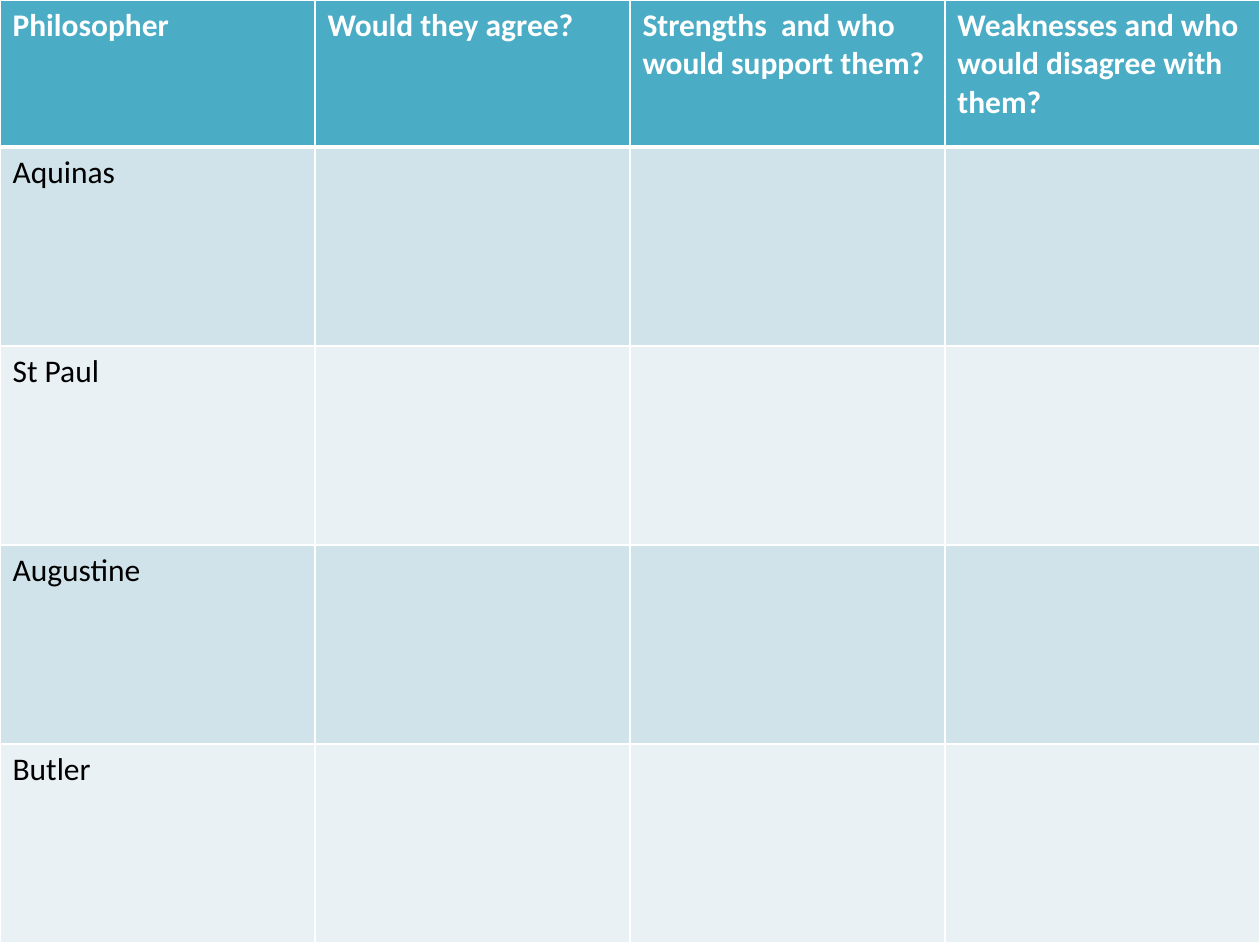
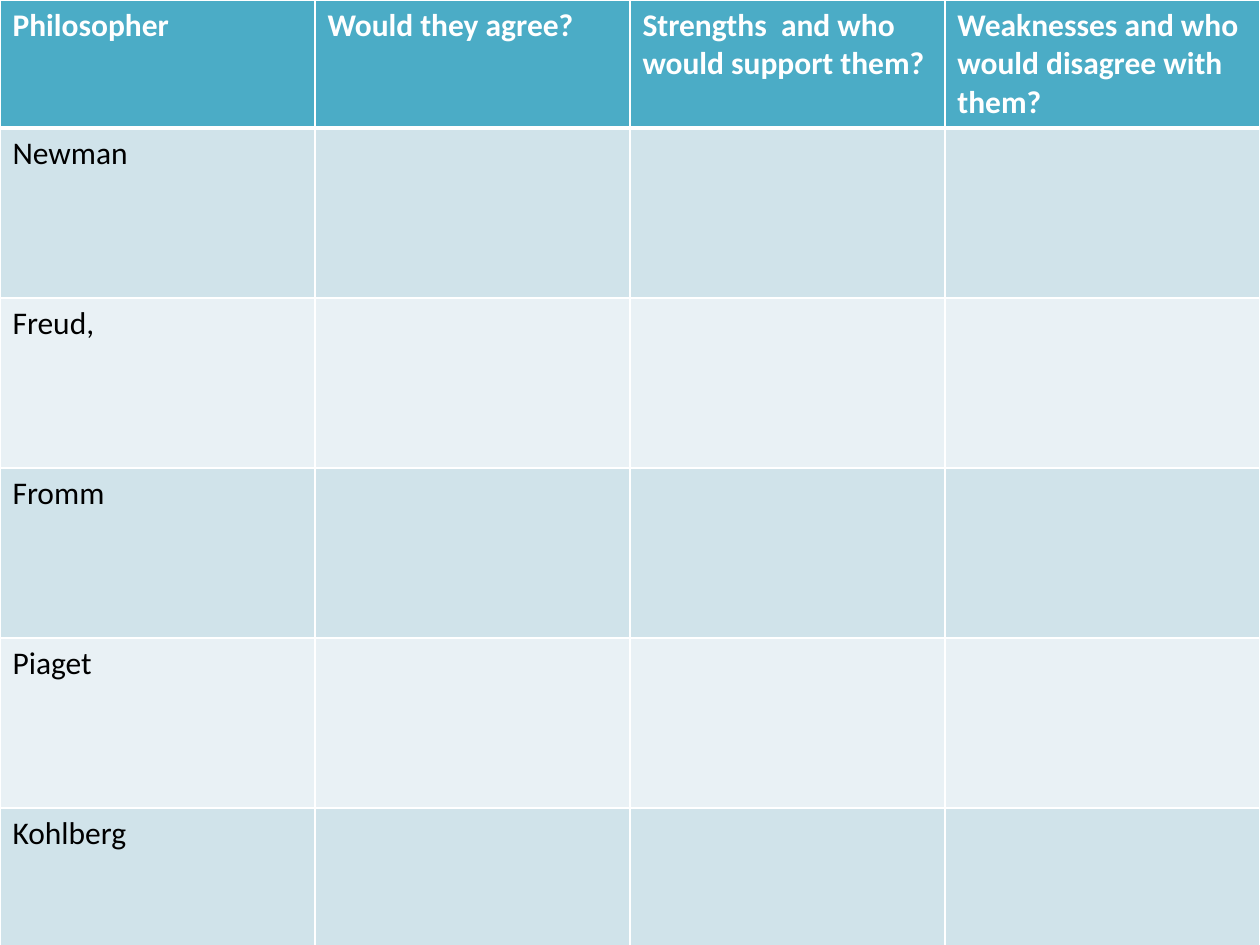
from lxml import etree
from pptx import Presentation
from pptx.dml.color import RGBColor
from pptx.oxml.ns import qn
from pptx.util import Pt

HEADINGS = [
    "Philosopher",
    "Would they agree?",
    "Strengths  and who would support them?",
    "Weaknesses and who would disagree with them?",
]
GRIDS = [
    {
        "philosophers": ["Aquinas", "St Paul", "Augustine", "Butler"],
        "header_height": 147,
        "row_height": 199,
        "table_height": 945,
    },
    {
        "philosophers": ["Newman", "Freud,", "Fromm", "Piaget", "Kohlberg"],
        "header_height": 97,
        "row_height": 170,
        "table_height": 974,
    },
]

COLOURS = {
    "header": "4BACC6",
    "odd_row": "D0E3EA",
    "even_row": "E9F1F5",
    "border": "FFFFFF",
    "header_text": "FFFFFF",
    "body_text": "000000",
}
FONT = {"name": "Calibri", "size": Pt(18)}
THIN, THICK = Pt(1), Pt(3)

PX = 914400 // 126
SLIDE_WIDTH, SLIDE_HEIGHT = 1260, 945
COLUMN_WIDTH = SLIDE_WIDTH // len(HEADINGS)
BLANK_LAYOUT = 6


def set_borders(cell, widths):
    """Put the side lines in front of the fill, in schema order."""
    properties = cell._tc.get_or_add_tcPr()
    for position, (side, width) in enumerate(widths.items()):
        line = etree.Element(qn(f"a:ln{side}"), w=str(width))
        fill = etree.SubElement(line, qn("a:solidFill"))
        etree.SubElement(fill, qn("a:srgbClr"), val=COLOURS["border"])
        properties.insert(position, line)


def style_cell(cell, row_index):
    is_header = row_index == 0
    if is_header:
        fill_name = "header"
    else:
        fill_name = "odd_row" if row_index % 2 else "even_row"
    cell.fill.solid()
    cell.fill.fore_color.rgb = RGBColor.from_string(COLOURS[fill_name])
    set_borders(cell, {
        "L": THIN,
        "R": THIN,
        "T": THICK if row_index == 1 else THIN,
        "B": THICK if is_header else THIN,
    })
    font = cell.text_frame.paragraphs[0].font
    for attribute, value in {**FONT, "bold": is_header}.items():
        setattr(font, attribute, value)
    text_colour = COLOURS["header_text" if is_header else "body_text"]
    font.color.rgb = RGBColor.from_string(text_colour)


def add_grid(slide, philosophers, header_height, row_height, table_height):
    frame = slide.shapes.add_table(
        len(philosophers) + 1, len(HEADINGS),
        0, 0, SLIDE_WIDTH * PX, table_height * PX)
    table = frame.table
    for column in table.columns:
        column.width = COLUMN_WIDTH * PX
    for row_index, row in enumerate(table.rows):
        row.height = (row_height if row_index else header_height) * PX
        for cell in row.cells:
            style_cell(cell, row_index)
    frame.height = table_height * PX

    for column_index, heading in enumerate(HEADINGS):
        table.cell(0, column_index).text_frame.paragraphs[0].add_run().text = heading
    for row_index, philosopher in enumerate(philosophers, start=1):
        table.cell(row_index, 0).text_frame.paragraphs[0].add_run().text = philosopher


def main():
    deck = Presentation()
    deck.slide_width = SLIDE_WIDTH * PX
    deck.slide_height = SLIDE_HEIGHT * PX
    for grid in GRIDS:
        slide = deck.slides.add_slide(deck.slide_layouts[BLANK_LAYOUT])
        add_grid(slide, **grid)
    deck.save("out.pptx")


if __name__ == "__main__":
    main()
